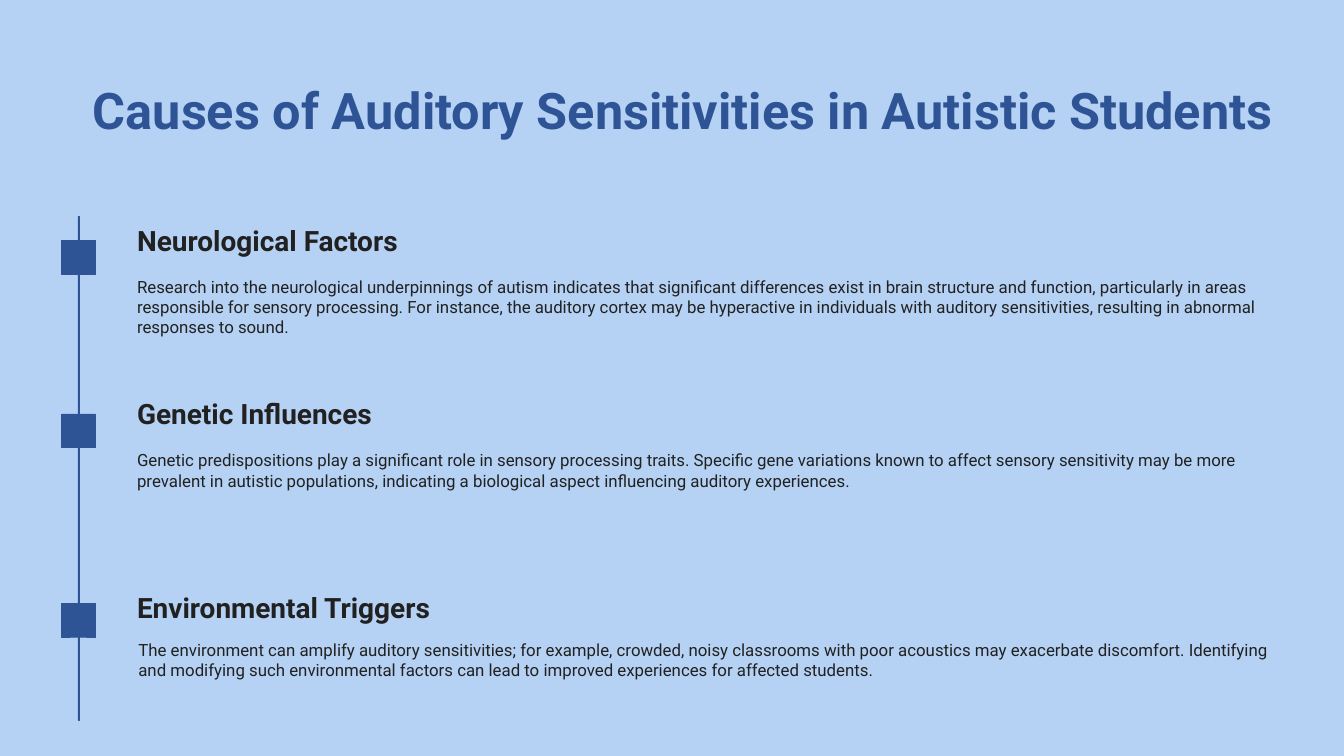
from pptx import Presentation
from pptx.dml.color import RGBColor
from pptx.enum.shapes import MSO_SHAPE as SHAPE
from pptx.enum.text import MSO_ANCHOR as ANCHOR, MSO_AUTO_SIZE as AUTO, PP_ALIGN as ALIGN
from pptx.util import Inches, Pt

SKY, NAVY, INK = "B5D2F4", "2E5495", "212121"
TITLE = dict(size=Pt(27), bold=True)
HEADING = dict(size=Pt(15), bold=True)
BODY = dict(size=Pt(9), bold=False)

# Heading top, body left, width, body height, gap tightening, heading, body
CAUSES = [
    (1.61, 0.97, 8.63, 0.56, 0, "Neurological Factors",
     "Research into the neurological underpinnings of autism indicates that "
     "significant differences exist in brain structure and function, particularly "
     "in areas responsible for sensory processing. For instance, the auditory cortex "
     "may be hyperactive in individuals with auditory sensitivities, resulting in "
     "abnormal responses to sound."),
    (2.9, 0.97, 8.64, 0.41, 0, "Genetic Influences",
     "Genetic predispositions play a significant role in sensory processing traits. "
     "Specific gene variations known to affect sensory sensitivity may be more "
     "prevalent in autistic populations, indicating a biological aspect influencing "
     "auditory experiences."),
    (4.34, 0.98, 8.6, 0.41, 0.03, "Environmental Triggers",
     "The environment can amplify auditory sensitivities; for example, crowded, noisy "
     "classrooms with poor acoustics may exacerbate discomfort. Identifying and "
     "modifying such environmental factors can lead to improved experiences for "
     "affected students."),
]


def rgb(hex_color):
    return RGBColor.from_string(hex_color)


def write(sp, text, font, color, anchor=ANCHOR.TOP):
    tf = sp.text_frame
    frame = dict(word_wrap=True, auto_size=AUTO.NONE, vertical_anchor=anchor,
                 margin_left=Inches(0.05), margin_right=Inches(0.05),
                 margin_top=Inches(0.05), margin_bottom=Inches(0.05))
    for name, value in frame.items():
        setattr(tf, name, value)
    p = tf.paragraphs[0]
    p.alignment = ALIGN.LEFT
    r = p.add_run()
    r.text = text
    for name, value in dict(font, name="Roboto").items():
        setattr(r.font, name, value)
    r.font.color.rgb = rgb(color)


def add_text(s, x, y, w, h, *style):
    write(s.shapes.add_textbox(*map(Inches, (x, y, w, h))), *style)


def add_block(s, x, y, w, h):
    sp = s.shapes.add_shape(SHAPE.RECTANGLE, *map(Inches, (x, y, w, h)))
    sp.shadow.inherit = False
    sp.fill.solid()
    sp.fill.fore_color.rgb = sp.line.color.rgb = rgb(NAVY)
    sp.line.width = Pt(0.42)


def place_title(s, x, y, w, h, text):
    sp = s.shapes.title
    sp.left, sp.top, sp.width, sp.height = map(Inches, (x, y, w, h))
    write(sp, text, TITLE, NAVY)


def add_timeline(s, x, y, h, causes):
    # Vertical line, with a square marker centred on it for each cause
    add_block(s, x + 0.12, y, 0.01, h)
    for top, left, width, height, tighten, heading, body in causes:
        add_block(s, x, top + 0.18 - tighten, 0.25, 0.25)
        add_text(s, x + 0.51, top, width, 0.35, heading, HEADING, INK, ANCHOR.MIDDLE)
        add_text(s, left, top + 0.4 - tighten, width, height, body, BODY, INK)


def main():
    prs = Presentation()
    # Widescreen, 16:9
    prs.slide_width = Inches(10)
    prs.slide_height = prs.slide_width * 9 // 16
    s = prs.slides.add_slide(prs.slide_layouts[5])
    s.background.fill.solid()
    s.background.fill.fore_color.rgb = rgb(SKY)

    place_title(s, 0.64, 0.54, 9.02, 0.99,
                "Causes of Auditory Sensitivities in Autistic Students")
    add_timeline(s, 0.46, 1.61, 3.75, CAUSES)
    prs.save("out.pptx")


if __name__ == "__main__":
    main()
